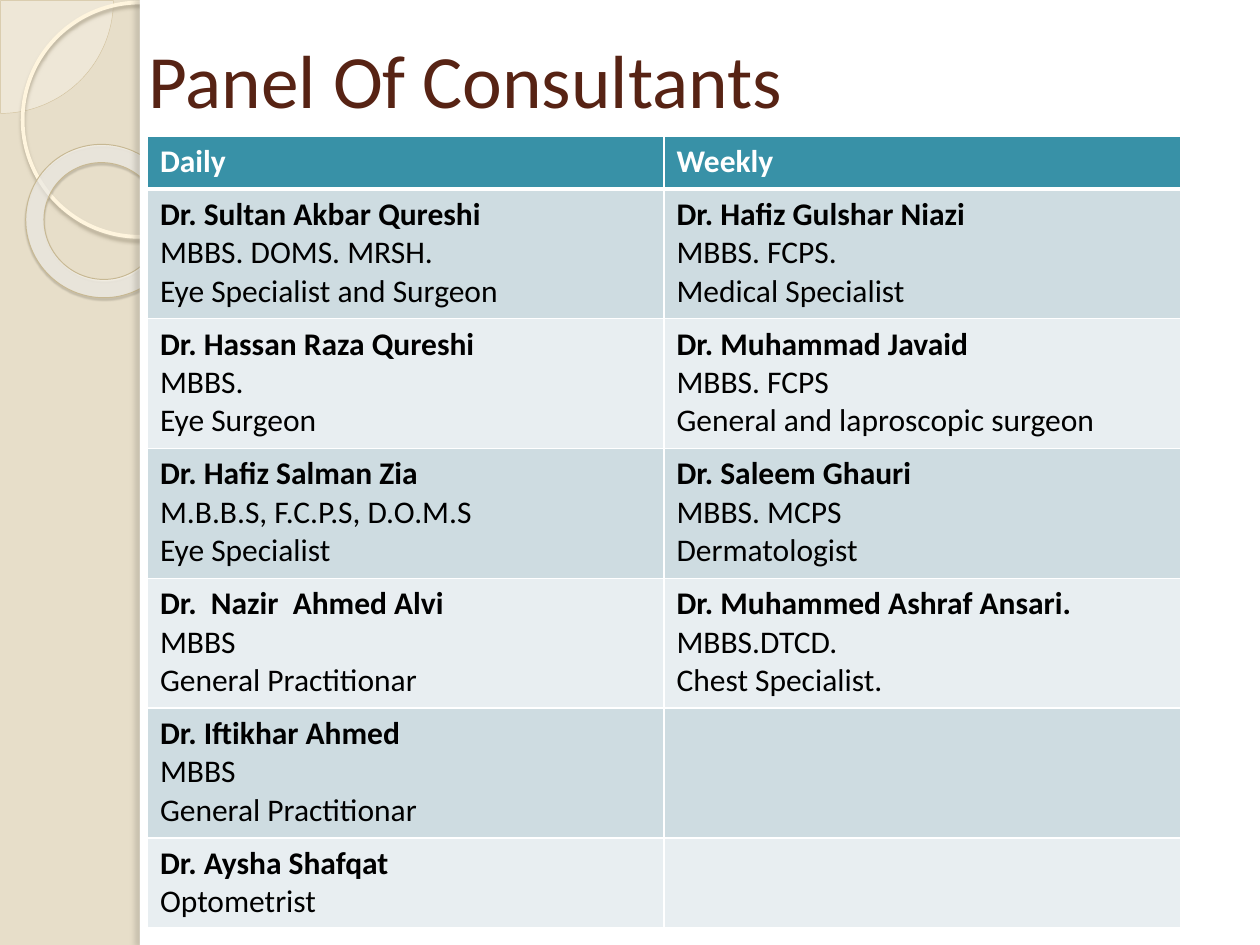
from dataclasses import dataclass

from lxml.etree import SubElement
from pptx import Presentation
from pptx.dml.color import RGBColor
from pptx.enum.shapes import MSO_SHAPE
from pptx.enum.text import MSO_ANCHOR, MSO_AUTO_SIZE, PP_ALIGN
from pptx.oxml import parse_xml
from pptx.oxml.ns import nsdecls, qn
from pptx.util import Inches, Pt


@dataclass(frozen=True)
class Theme:
    font: str = "Calibri"
    title_size: int = 43
    table_size: int = 18
    background: str = "E7DEC9"
    white: str = "FFFFFF"
    black: str = "000000"
    brown: str = "572314"
    header: str = "3891A7"
    bands: tuple = ("CEDCE1", "E8EEF1")
    pie: str = "FEFAF4"
    pie_line: str = "D3C39F"
    ring_line: str = "FFF5DE"
    ring_shadow: str = "B0A68F"
    donut: str = "FFFEFB"
    donut_line: str = "C7B893"
    donut_shadow: str = "5A5444"
    panel_shadow: str = "736F63"


THEME = Theme()
HEADINGS = ("Daily", "Weekly")
CONSULTANTS = (
    ("Dr. Sultan Akbar Qureshi\nMBBS. DOMS. MRSH.\nEye Specialist and Surgeon",
     "Dr. Hafiz Gulshar Niazi\nMBBS. FCPS.\nMedical Specialist"),
    ("Dr. Hassan Raza Qureshi\nMBBS.\nEye Surgeon",
     "Dr. Muhammad Javaid\nMBBS. FCPS\nGeneral and laproscopic surgeon"),
    ("Dr. Hafiz Salman Zia\nM.B.B.S, F.C.P.S, D.O.M.S\nEye Specialist",
     "Dr. Saleem Ghauri\nMBBS. MCPS\nDermatologist"),
    ("Dr.  Nazir  Ahmed Alvi\nMBBS\nGeneral Practitionar",
     "Dr. Muhammed Ashraf Ansari.\nMBBS.DTCD.\nChest Specialist."),
    ("Dr. Iftikhar Ahmed\nMBBS\nGeneral Practitionar", ""),
    ("Dr. Aysha Shafqat\nOptometrist", ""),
)


def color(value):
    return RGBColor.from_string(value)


def style_font(font, size, value, bold=False):
    font.name = THEME.font
    font.size = Pt(size)
    font.bold = bold
    font.color.rgb = color(value)


def add_plain_shape(slide, kind, box, fill=None, opacity=100, line=None, width=0):
    shape = slide.shapes.add_shape(kind, *map(Inches, box))
    shape.shadow.inherit = False
    if fill:
        shape.fill.solid()
        shape.fill.fore_color.rgb = color(fill)
        if opacity < 100:
            value = shape.element.spPr.find(qn("a:solidFill"))[0]
            SubElement(value, qn("a:alpha"), val=str(opacity * 1000))
    else:
        shape.fill.background()
    if line:
        shape.line.color.rgb = color(line)
        shape.line.width = Pt(width)
    else:
        shape.line.fill.background()
    return shape


def add_shadow(shape, value, opacity, blur, distance, angle):
    effects = shape.element.spPr.find(qn("a:effectLst"))
    effects.append(parse_xml(
        f'<a:outerShdw {nsdecls("a")} blurRad="{Pt(blur)}" dist="{Pt(distance)}" '
        f'dir="{angle * 60000}" algn="tl" rotWithShape="0"><a:srgbClr val="{value}">'
        f'<a:alpha val="{opacity * 1000}"/></a:srgbClr></a:outerShdw>'))


def add_sidebar(slide, box):
    left, top, width, height = box
    pie = add_plain_shape(slide, MSO_SHAPE.PIE, (left - 0.89, top - 0.89, 1.79, 1.79),
                          THEME.pie, 33, THEME.pie_line, 0.25)
    pie.adjustments[0], pie.adjustments[1] = 0, 54
    ring = add_plain_shape(slide, MSO_SHAPE.OVAL, (left + 0.18, top + 0.02, 1.86, 1.86),
                           line=THEME.ring_line, width=2.15)
    add_shadow(ring, THEME.ring_shadow, 85, 2, 2, 90)
    donut = add_plain_shape(slide, MSO_SHAPE.DONUT, (left + 0.2, top + 1.15, 1.23, 1.21),
                            THEME.donut, 58, THEME.donut_line, 0.58)
    donut.adjustments[0] = 0.12
    donut.rotation = 38.6
    add_shadow(donut, THEME.donut_shadow, 35, 1, 1.2, 75)
    edge = left + width
    add_plain_shape(slide, MSO_SHAPE.RECTANGLE, (edge, top, 10 - edge, height), THEME.white)
    strip = add_plain_shape(slide, MSO_SHAPE.RECTANGLE, (edge, top, 0.08, height), THEME.white)
    add_shadow(strip, THEME.panel_shadow, 25, 3, 3, 180)


def place_title(slide, box, text):
    title = slide.shapes.title
    title.left, title.top, title.width, title.height = map(Inches, box)
    frame = title.text_frame
    frame.text = text
    frame.word_wrap = True
    frame.auto_size = MSO_AUTO_SIZE.NONE
    frame.vertical_anchor = MSO_ANCHOR.MIDDLE
    paragraph = frame.paragraphs[0]
    paragraph.alignment = PP_ALIGN.LEFT
    style_font(paragraph.font, THEME.title_size, THEME.brown)
    title.element.getparent().append(title.element)


def set_borders(cell, top=1, bottom=1):
    properties = cell._tc.get_or_add_tcPr()
    widths = {"L": 1, "R": 1, "T": top, "B": bottom}
    for index, (side, width) in enumerate(widths.items()):
        properties.insert(index, parse_xml(
            f'<a:ln{side} {nsdecls("a")} w="{Pt(width)}"><a:solidFill>'
            f'<a:srgbClr val="{THEME.white}"/></a:solidFill></a:ln{side}>'))


def fill_cell(cell, text, fill, text_color):
    cell.fill.solid()
    cell.fill.fore_color.rgb = color(fill)
    cell.text = text
    for index, paragraph in enumerate(cell.text_frame.paragraphs):
        style_font(paragraph.font, THEME.table_size, text_color, bold=index == 0)


def add_consultant_table(slide, box):
    rows = (HEADINGS, *CONSULTANTS)
    table = slide.shapes.add_table(len(rows), len(HEADINGS), *map(Inches, box)).table
    heights = [0.42] + [1.03] * (len(rows) - 2) + [0.71]
    for row_index, (row, height) in enumerate(zip(rows, heights)):
        table.rows[row_index].height = Inches(height)
        is_header = row_index == 0
        fill = THEME.header if is_header else THEME.bands[(row_index - 1) % 2]
        text_color = THEME.white if is_header else THEME.black
        for column_index, text in enumerate(row):
            cell = table.cell(row_index, column_index)
            fill_cell(cell, text, fill, text_color)
            set_borders(cell, top=3 if row_index == 1 else 1, bottom=3 if is_header else 1)


def build_consultants_slide(presentation):
    slide = presentation.slides.add_slide(presentation.slide_layouts[5])
    slide.background.fill.solid()
    slide.background.fill.fore_color.rgb = color(THEME.background)
    add_sidebar(slide, (0, 0, 1.11, 7.5))
    place_title(slide, (1.08, 0, 8.2, 1.25), "Panel Of Consultants")
    add_consultant_table(slide, (1.17, 1.08, 8.2, 6.28))


def main():
    presentation = Presentation()
    presentation.slide_width = Inches(10)
    presentation.slide_height = Inches(7.5)
    build_consultants_slide(presentation)
    presentation.save("out.pptx")


if __name__ == "__main__":
    main()
